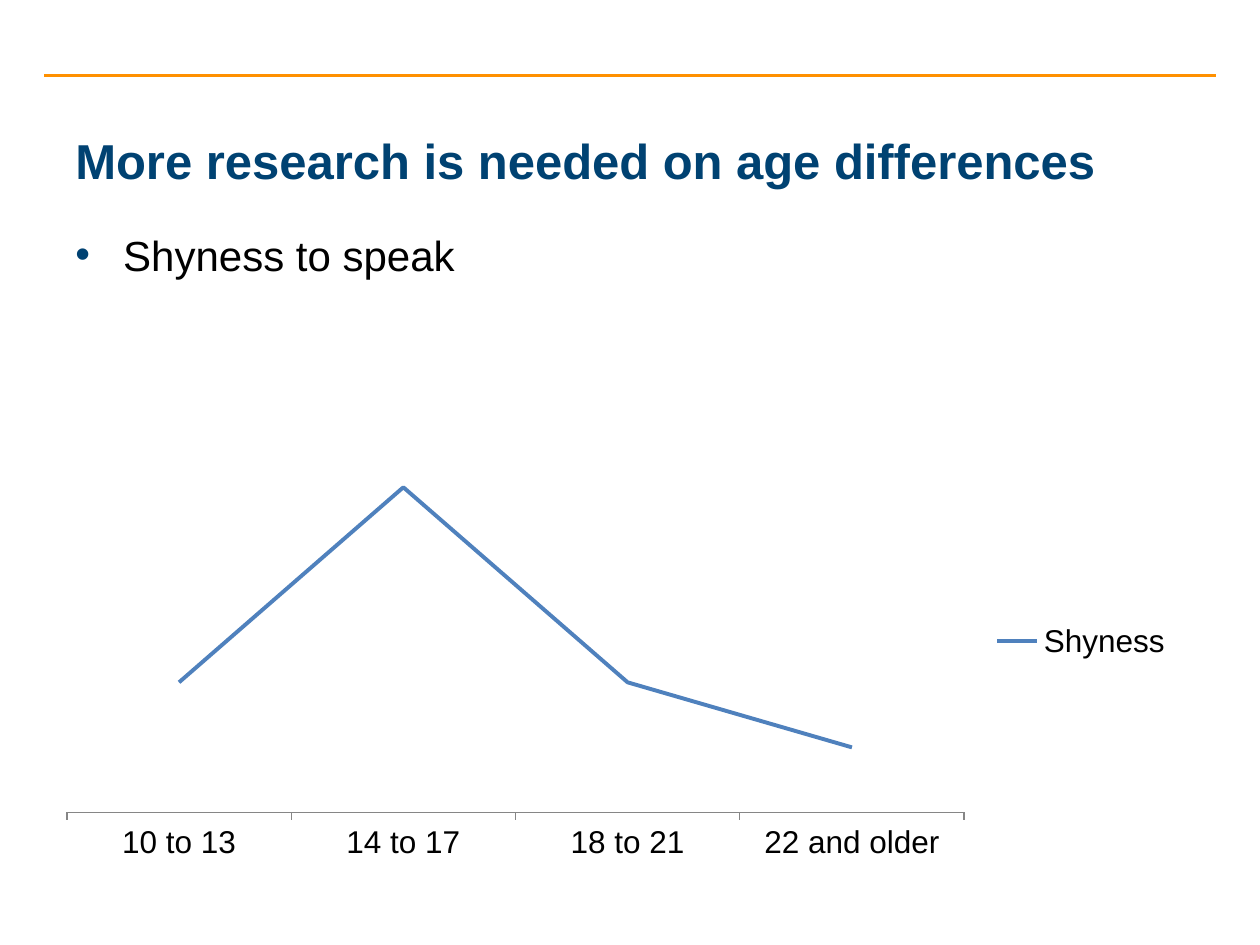
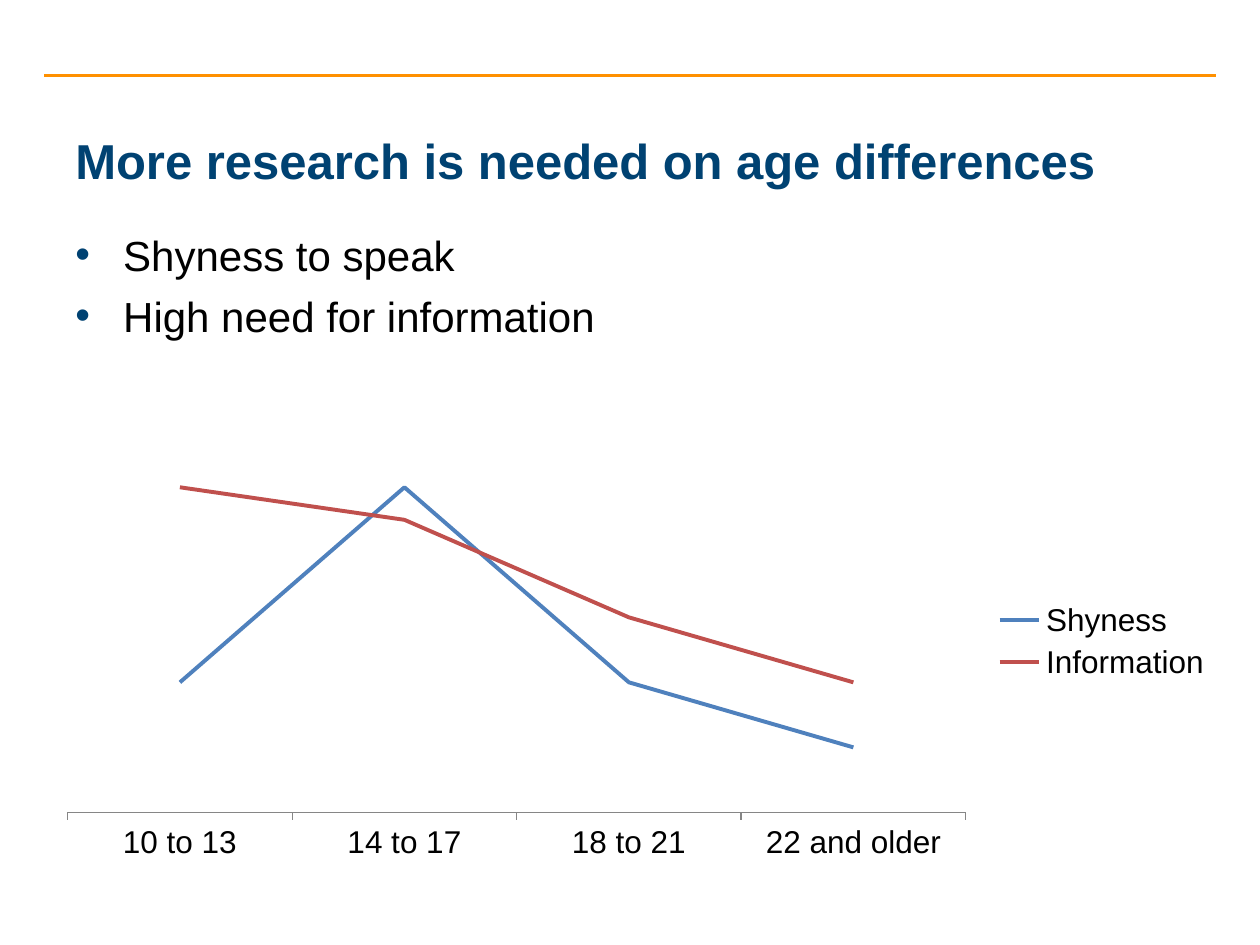
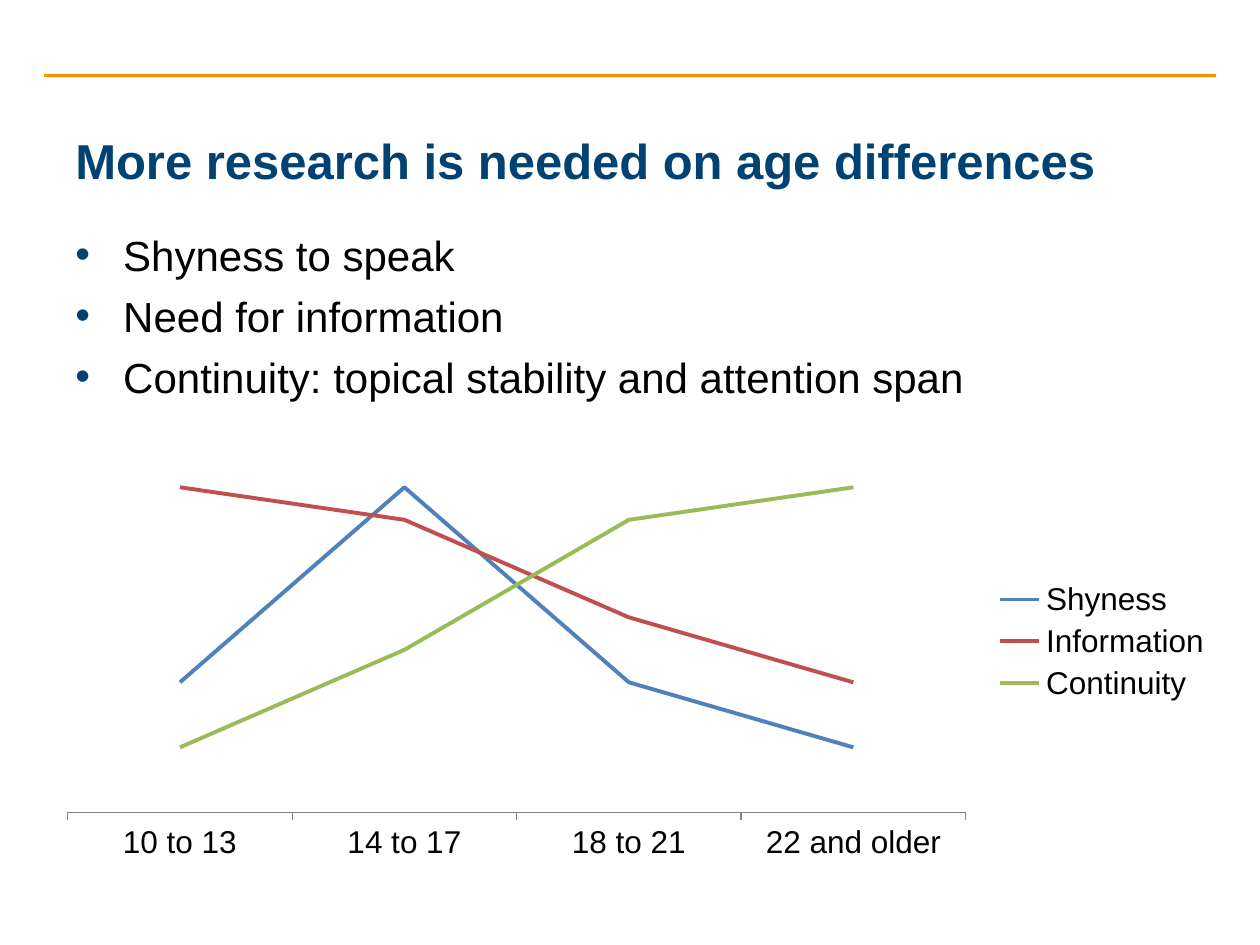
from lxml import etree
from pptx import Presentation
from pptx.chart.data import CategoryChartData
from pptx.dml.color import RGBColor
from pptx.enum.chart import (XL_CHART_TYPE, XL_LEGEND_POSITION, XL_MARKER_STYLE,
                             XL_TICK_MARK)
from pptx.enum.shapes import MSO_CONNECTOR
from pptx.enum.text import MSO_ANCHOR
from pptx.oxml.ns import qn
from pptx.util import Inches, Pt

LINE_CHART = XL_CHART_TYPE.LINE
LEGEND_RIGHT = XL_LEGEND_POSITION.RIGHT
NO_MARKER = XL_MARKER_STYLE.NONE
TICK_OUT, TICK_NONE = XL_TICK_MARK.OUTSIDE, XL_TICK_MARK.NONE
STRAIGHT = MSO_CONNECTOR.STRAIGHT
TOP, BOTTOM = MSO_ANCHOR.TOP, MSO_ANCHOR.BOTTOM

FONT = "Arial"
NAVY, ORANGE, BLACK, GRAY = "004272", "FF9000", "000000", "868686"

TITLE = "More research is needed on age differences"
TITLE_BOX = (0.5, 0.84, 9, 0.71)
BODY_BOX = (0.5, 1.77, 9, 5.52)
INDENT = 0.38

AGE_GROUPS = ["10 to 13", "14 to 17", "18 to 21", "22 and older"]
TRENDS = [
    ("Shyness", (40, 100, 40, 20), "4F81BD"),
    ("Information", (100, 90, 60, 40), "C0504D"),
    ("Continuity", (20, 50, 90, 100), "9BBB59"),
]

# Each slide: its bullets and the width of its chart; one trend per bullet.
SLIDES = [
    (["Shyness to speak"], 9.06),
    (["Shyness to speak", "High need for information"], 9.37),
    (["Shyness to speak", "Need for information",
      "Continuity: topical stability and attention span"], 9.37),
]


def rgb(color):
    return RGBColor.from_string(color)


def set_font(font, size, color, bold=False):
    font.name, font.size, font.bold = FONT, Pt(size), bold
    font.color.rgb = rgb(color)


def add_text_frame(s, box, anchor):
    tf = s.shapes.add_textbox(*map(Inches, box)).text_frame
    tf.word_wrap = True
    tf.vertical_anchor = anchor
    return tf


def add_run(p, text, size, color, bold=False):
    r = p.add_run()
    r.text = text
    set_font(r.font, size, color, bold)


def add_rule(s):
    """Draw the orange line above the title."""
    line = s.shapes.add_connector(STRAIGHT, Inches(0.35), Inches(0.6),
                                  Inches(9.65), Inches(0.6))
    line.line.color.rgb = rgb(ORANGE)
    line.line.width = Pt(1.5)
    etree.SubElement(line._element.spPr, qn("a:effectLst"))


def add_title(s, box):
    tf = add_text_frame(s, box, BOTTOM)
    add_run(tf.paragraphs[0], TITLE, 28, NAVY, bold=True)


def set_bullet(p):
    pPr = p._p.get_or_add_pPr()
    pPr.set("marL", str(Inches(INDENT)))
    pPr.set("indent", str(-Inches(INDENT)))
    color = etree.SubElement(pPr, qn("a:buClr"))
    etree.SubElement(color, qn("a:srgbClr"), val=NAVY)
    etree.SubElement(pPr, qn("a:buFont"), typeface=FONT)
    etree.SubElement(pPr, qn("a:buChar"), char="•")


def add_bullets(s, box, bullets):
    tf = add_text_frame(s, box, TOP)
    for i, text in enumerate(bullets):
        p = tf.add_paragraph() if i else tf.paragraphs[0]
        set_bullet(p)
        if i:
            p.space_before = Pt(6)
        add_run(p, text, 24, BLACK)


def add_trend_chart(s, box, trends):
    data = CategoryChartData()
    data.categories = AGE_GROUPS
    for name, values, _ in trends:
        data.add_series(name, values)
    chart = s.shapes.add_chart(LINE_CHART, *map(Inches, box), data).chart
    set_font(chart.font, 18, BLACK)
    chart.has_title = False
    chart.has_legend = True
    chart.legend.position = LEGEND_RIGHT
    chart.legend.include_in_layout = False

    plot = chart.plots[0]
    plot.vary_by_categories = False
    for series, (_, _, color) in zip(plot.series, trends):
        series.smooth = False
        series.marker.style = NO_MARKER
        series.format.line.color.rgb = rgb(color)
        series.format.line.width = Pt(2.25)

    ages = chart.category_axis
    ages.major_tick_mark, ages.minor_tick_mark = TICK_OUT, TICK_NONE
    ages.format.line.color.rgb = rgb(GRAY)
    ages.format.line.width = Pt(0.75)
    level = chart.value_axis
    level.minimum_scale, level.maximum_scale = 0, 120
    level.has_major_gridlines = False
    level.visible = False


def add_trend_slide(prs, bullets, chart_width):
    s = prs.slides.add_slide(prs.slide_layouts[6])
    add_rule(s)
    add_title(s, TITLE_BOX)
    add_bullets(s, BODY_BOX, bullets)
    add_trend_chart(s, (0.35, 3.28, chart_width, 3.62), TRENDS[:len(bullets)])


def main():
    prs = Presentation()
    prs.slide_width, prs.slide_height = Inches(10), Inches(7.5)
    for bullets, chart_width in SLIDES:
        add_trend_slide(prs, bullets, chart_width)
    prs.save("out.pptx")


if __name__ == "__main__":
    main()
